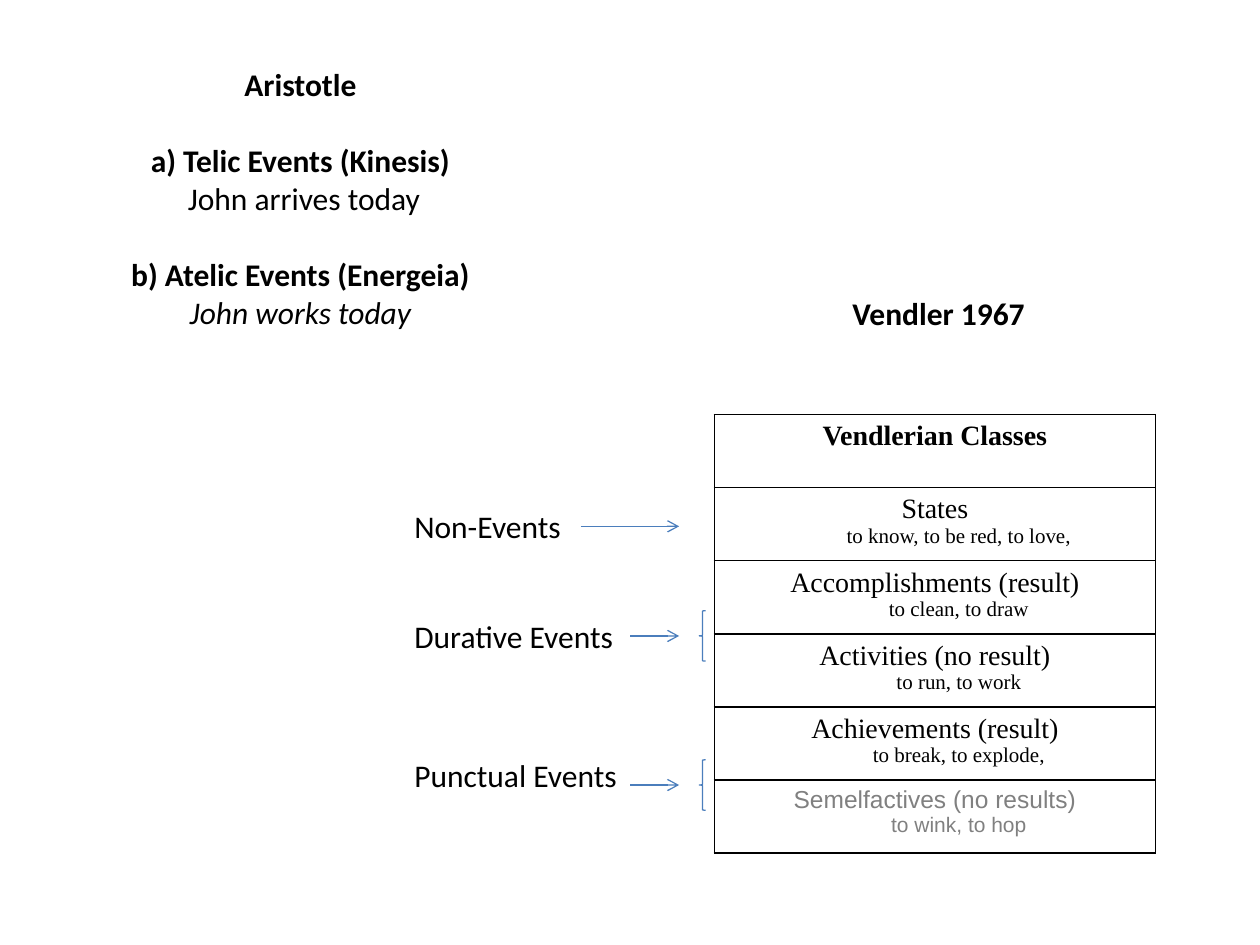
import copy

import pptx
import pptx.dml.color
import pptx.enum.shapes
import pptx.enum.text
import pptx.oxml
import pptx.oxml.ns
import pptx.util
from pptx.util import Inches, Pt

COLORS = {"text": "000000", "muted": "808080", "accent": "4B7EBC"}
CENTER = pptx.enum.text.PP_ALIGN.CENTER
LEFT = pptx.enum.text.PP_ALIGN.LEFT

BODY = {"name": "Calibri", "size": Pt(18), "bold": False, "italic": False, "color": "text"}
STRONG = BODY | {"bold": True}
CLASS = BODY | {"name": "Times New Roman", "size": Pt(16)}
MUTED = CLASS | {"name": "Arial", "size": Pt(14), "color": "muted"}
EXAMPLE = {"size": Pt(12)}

ARISTOTLE = [
    [("Aristotle", STRONG)],
    [("a) Telic Events (Kinesis)", STRONG), (" John arrives today", BODY)],
    [("b) Atelic Events (Energeia)", STRONG), ("John works today", BODY | {"italic": True})],
]
VENDLER = [[("Vendler 1967", STRONG)]]
CLASSES = [
    ("Vendlerian Classes", None, CLASS | {"bold": True}),
    ("States", "to know, to be red, to love,", CLASS),
    ("Accomplishments (result)", "to clean, to draw", CLASS),
    ("Activities (no result)", "to run, to work", CLASS),
    ("Achievements (result)", "to break, to explode,", CLASS),
    ("Semelfactives (no results)", "to wink, to hop", MUTED),
]
EVENTS = [
    {"label": "Non-Events", "label_row": 1.53, "arrow_row": 1.53, "start": 4.61, "brace": False},
    {"label": "Durative Events", "label_row": 3.03, "arrow_row": 3.03, "start": 5, "brace": True},
    {"label": "Punctual Events", "label_row": 4.93, "arrow_row": 5.07, "start": 5, "brace": True},
]

TABLE_LEFT, TABLE_TOP, TABLE_WIDTH, ROW_HEIGHT = 5.67, 3.29, 3.5, 0.58
LABEL_LEFT, LABEL_WIDTH, LABEL_HEIGHT = 3.19, 1.97, 0.4
ARROW_END = 5.39
BRACE_LEFT, BRACE_WIDTH, BRACE_HEIGHT = 5.55, 0.05, 0.4
HANGING_INDENT = Inches(0.38)


def color(name):
    return pptx.dml.color.RGBColor.from_string(COLORS[name])


def row_y(row):
    return TABLE_TOP + row * ROW_HEIGHT


def add_xml(parent, xml):
    namespace = pptx.oxml.ns.nsdecls("a")
    parent.append(pptx.oxml.parse_xml(xml.replace(">", f" {namespace}>", 1)))


def write_lines(paragraph, lines, alignment):
    paragraph.alignment = alignment
    for index, (text, style) in enumerate(lines):
        if index:
            paragraph.add_line_break()
            line_break = paragraph._p.findall(pptx.oxml.ns.qn("a:br"))[-1]
            line_break.append(copy.deepcopy(paragraph.runs[-1]._r.rPr))
        run = paragraph.add_run()
        run.text = text
        for key, value in style.items():
            if key == "color":
                run.font.color.rgb = color(value)
            else:
                setattr(run.font, key, value)


def write_text(shape, box, paragraphs, alignment, wrap):
    for name, value in zip(("left", "top", "width", "height"), box):
        setattr(shape, name, Inches(value))
    frame = shape.text_frame
    settings = {
        "word_wrap": wrap,
        "auto_size": pptx.enum.text.MSO_AUTO_SIZE.NONE,
        "vertical_anchor": pptx.enum.text.MSO_ANCHOR.MIDDLE,
    }
    for key, value in settings.items():
        setattr(frame, key, value)
    for index, lines in enumerate(paragraphs):
        paragraph = frame.add_paragraph() if index else frame.paragraphs[0]
        paragraph.space_before = Pt(22 if index else 0)
        write_lines(paragraph, lines, alignment)


def add_text(slide, box, paragraphs, alignment, wrap):
    shape = slide.shapes.add_textbox(0, 0, 0, 0)
    write_text(shape, box, paragraphs, alignment, wrap)


def add_classes(slide):
    box = [Inches(n) for n in (TABLE_LEFT, TABLE_TOP, TABLE_WIDTH, ROW_HEIGHT * len(CLASSES))]
    table = slide.shapes.add_table(len(CLASSES), 1, *box).table
    table.first_row = table.horz_banding = False
    for row, (name, example, style) in zip(table.rows, CLASSES):
        row.height = Inches(ROW_HEIGHT)
        cell = row.cells[0]
        properties = cell._tc.get_or_add_tcPr()
        for side in "LRTB":
            add_xml(properties, f'<a:ln{side} w="{Pt(1)}"><a:solidFill>'
                    f'<a:srgbClr val="{COLORS["text"]}"/></a:solidFill></a:ln{side}>')
        cell.fill.background()
        lines = [(name, style)] + ([(example, style | EXAMPLE)] if example else [])
        paragraph = cell.text_frame.paragraphs[0]
        write_lines(paragraph, lines, CENTER)
        indent = paragraph._p.get_or_add_pPr()
        indent.set("marL", str(HANGING_INDENT))
        indent.set("indent", str(-HANGING_INDENT))


def style_line(shape):
    shape.line.color.rgb = color("accent")
    shape.line.width = Pt(0.75)


def add_arrow(slide, start, y):
    points = [Inches(n) for n in (start, y, ARROW_END, y)]
    arrow = slide.shapes.add_connector(pptx.enum.shapes.MSO_CONNECTOR.STRAIGHT, *points)
    style_line(arrow)
    add_xml(arrow.line._get_or_add_ln(), '<a:tailEnd type="arrow"></a:tailEnd>')
    add_xml(arrow._element.spPr, "<a:effectLst></a:effectLst>")


def add_brace(slide, y):
    box = [Inches(n) for n in (BRACE_LEFT, y - BRACE_HEIGHT / 2, BRACE_WIDTH, BRACE_HEIGHT)]
    brace = slide.shapes.add_shape(pptx.enum.shapes.MSO_SHAPE.LEFT_BRACE, *box)
    brace.shadow.inherit = False
    brace.fill.background()
    style_line(brace)


def main():
    presentation = pptx.Presentation()
    presentation.slide_width, presentation.slide_height = Inches(10), Inches(7.5)
    slide = presentation.slides.add_slide(presentation.slide_layouts[5])
    write_text(slide.shapes.title, (0.93, 0.46, 2.91, 2.22), ARISTOTLE, CENTER, False)
    add_classes(slide)
    add_text(slide, (6.66, 2.28, 1.58, 0.4), VENDLER, CENTER, False)
    for event in EVENTS:
        top = row_y(event["label_row"]) - LABEL_HEIGHT / 2
        box = (LABEL_LEFT, top, LABEL_WIDTH, LABEL_HEIGHT)
        add_text(slide, box, [[(event["label"], BODY)]], LEFT, True)
        arrow_y = row_y(event["arrow_row"])
        add_arrow(slide, event["start"], arrow_y)
        if event["brace"]:
            add_brace(slide, arrow_y)
    presentation.save("out.pptx")


if __name__ == "__main__":
    main()
